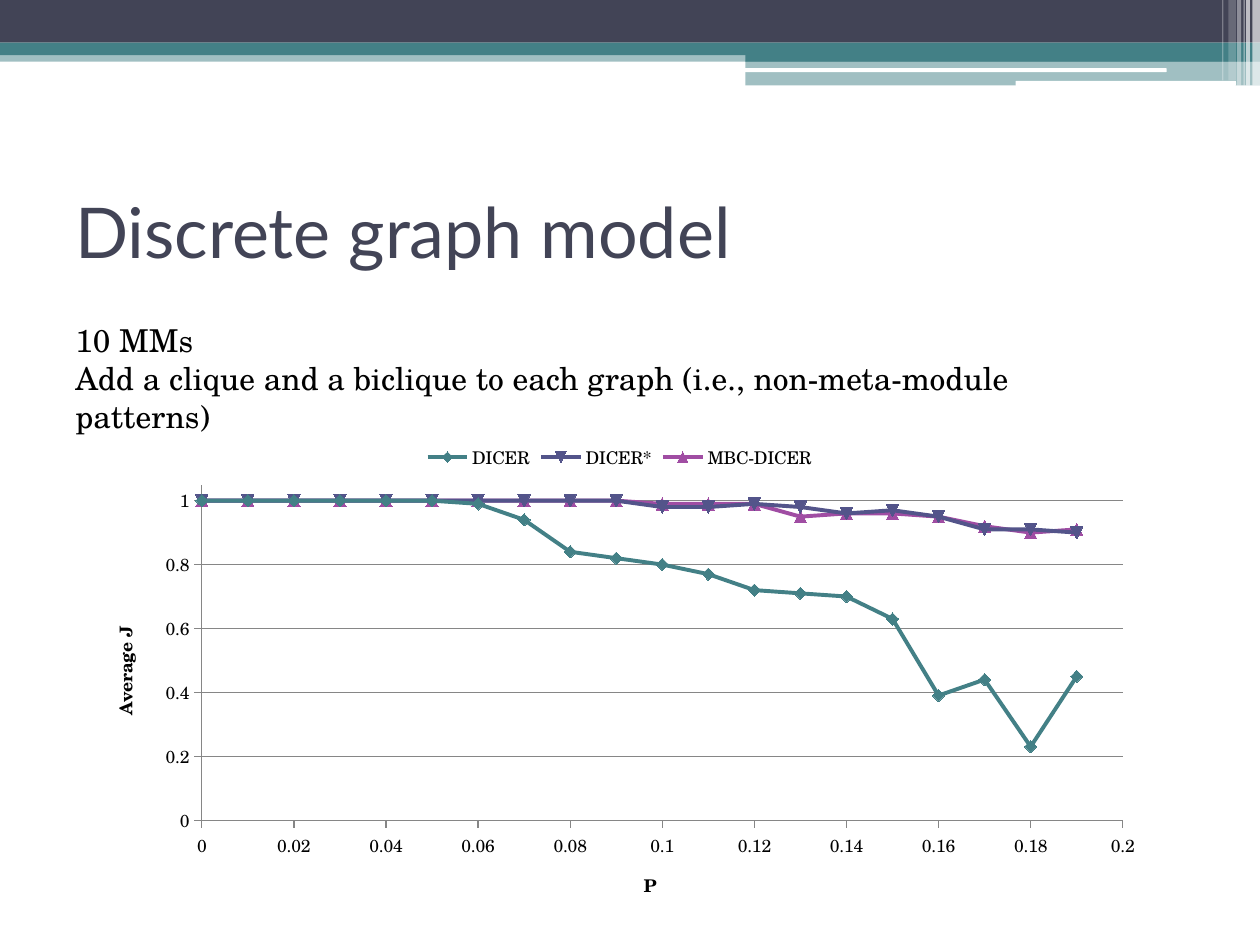
from typing import NamedTuple

from lxml.etree import SubElement
from pptx import Presentation
from pptx.chart.data import XyChartData
from pptx.dml.color import RGBColor
from pptx.enum.chart import XL_CHART_TYPE, XL_LEGEND_POSITION, XL_MARKER_STYLE, XL_TICK_MARK
from pptx.enum.shapes import MSO_SHAPE
from pptx.enum.text import MSO_ANCHOR
from pptx.oxml import parse_xml
from pptx.oxml.ns import nsdecls, qn
from pptx.util import Pt

NAVY = RGBColor(0x42, 0x44, 0x56)
TEAL = RGBColor(0x43, 0x80, 0x86)
BLUE = RGBColor(0x53, 0x54, 0x8A)
PLUM = RGBColor(0xA0, 0x4D, 0xA3)
GREY = RGBColor(0x86, 0x86, 0x86)
WHITE = RGBColor(0xFF, 0xFF, 0xFF)
BLACK = RGBColor(0, 0, 0)
SERIF = "TeX Gyre Schola"


class Bar(NamedTuple):
    left: float
    top: float
    width: float
    height: float
    color: RGBColor
    alpha: int = 100
    kind: MSO_SHAPE = MSO_SHAPE.RECTANGLE


class Line(NamedTuple):
    name: str
    color: RGBColor
    vals: list[float]


ROUND = MSO_SHAPE.ROUNDED_RECTANGLE
BARS = [
    Bar(0, 28.8, 720, 6.5, TEAL, 50),
    Bar(0, 0, 720, 24.4, NAVY),
    Bar(0, 24.4, 720, 7.2, TEAL),
    Bar(426, 28, 294, 7.2, TEAL),
    Bar(426, 34.6, 294, 14.2, TEAL, 50),
    Bar(425.5, 39, 241.2, 2.2, WHITE, kind=ROUND),
    Bar(580.3, 46.2, 126, 2.9, WHITE, kind=ROUND),
    Bar(715.7, 0, 4.3, 49, WHITE, 65),
    Bar(712.1, 0, 2.2, 49, WHITE, 65),
    Bar(710.6, 0, 0.7, 49, WHITE, 60),
    Bar(707, 0, 2.2, 49, WHITE, 40),
    Bar(702, 0, 4.3, 46, WHITE, 20),
    Bar(698.4, 0, 0.7, 46, WHITE, 30),
]
LINES = [
    Line("DICER", TEAL, [1] * 6 + [0.99, 0.94, 0.84, 0.82, 0.8, 0.77, 0.72, 0.71,
                                   0.7, 0.63, 0.39, 0.44, 0.23, 0.45]),
    Line("DICER*", BLUE, [1] * 10 + [0.98, 0.98, 0.99, 0.98, 0.96,
                                     0.97, 0.95, 0.91, 0.91, 0.9]),
    Line("MBC-DICER", PLUM, [1] * 10 + [0.99, 0.99, 0.99, 0.95, 0.96,
                                        0.96, 0.95, 0.92, 0.9, 0.91]),
]


def draw_bar(slide, bar: Bar) -> None:
    shape = slide.shapes.add_shape(bar.kind, Pt(bar.left), Pt(bar.top),
                                   Pt(bar.width), Pt(bar.height))
    shape.shadow.inherit = False
    shape.line.fill.background()
    shape.fill.solid()
    shape.fill.fore_color.rgb = bar.color
    if bar.alpha < 100:
        tint = shape.fill._xPr.find(".//" + qn("a:srgbClr"))
        SubElement(tint, qn("a:alpha")).set("val", str(bar.alpha * 1000))


def draw_text(slide, box: tuple, text: str, size: int, font: str,
              color: RGBColor, anchor: MSO_ANCHOR) -> None:
    frame = slide.shapes.add_textbox(*map(Pt, box)).text_frame
    frame.word_wrap = True
    frame.vertical_anchor = anchor
    frame.text = text
    for para in frame.paragraphs:
        for run in para.runs:
            run.font.size = Pt(size)
            run.font.name = font
            run.font.color.rgb = color


def style_axis(axis, title: str, top: float, step: float) -> None:
    axis.minimum_scale, axis.maximum_scale, axis.major_unit = 0, top, step
    axis.major_tick_mark = XL_TICK_MARK.OUTSIDE
    axis.minor_tick_mark = XL_TICK_MARK.NONE
    axis.tick_labels.number_format = "General"
    axis.tick_labels.number_format_is_linked = False
    axis.format.line.color.rgb = GREY
    axis.format.line.width = Pt(0.75)
    frame = axis.axis_title.text_frame
    frame.text = title
    font = frame.paragraphs[0].runs[0].font
    font.size, font.bold, font.name = Pt(10), True, SERIF
    font.color.rgb = BLACK


def place_plot(chart, left: float, top: float, width: float, height: float) -> None:
    """Fix the inner plot area, in fractions of the chart."""
    area = chart._chartSpace.chart.plotArea
    for old in area.findall(qn("c:layout")):
        area.remove(old)
    area.insert(0, parse_xml(
        f'<c:layout {nsdecls("c")}><c:manualLayout><c:layoutTarget val="inner"/>'
        '<c:xMode val="edge"/><c:yMode val="edge"/>'
        f'<c:x val="{left}"/><c:y val="{top}"/><c:w val="{width}"/><c:h val="{height}"/>'
        '</c:manualLayout></c:layout>'))


def draw_chart(slide) -> None:
    data = XyChartData()
    for line in LINES:
        series = data.add_series(line.name)
        for step, val in enumerate(line.vals):
            series.add_data_point(step / 100, val)
    chart = slide.shapes.add_chart(XL_CHART_TYPE.XY_SCATTER_SMOOTH, Pt(48), Pt(246),
                                   Pt(612), Pt(282), data).chart
    chart.has_title = False
    chart.font.size, chart.font.name = Pt(10), SERIF
    chart.font.color.rgb = BLACK
    chart.has_legend = True
    chart.legend.position = XL_LEGEND_POSITION.TOP
    chart.legend.include_in_layout = False
    style_axis(chart.category_axis, "P", 0.2, 0.02)
    style_axis(chart.value_axis, "Average J", 1.05, 0.2)
    chart.category_axis.has_major_gridlines = False
    chart.value_axis.has_major_gridlines = True
    grid = chart.value_axis.major_gridlines.format.line
    grid.color.rgb, grid.width = GREY, Pt(0.75)
    place_plot(chart, 0.11, 0.11, 0.86, 0.68)
    chart.plots[0].vary_by_categories = False
    for index, (series, line) in enumerate(zip(chart.plots[0].series, LINES), 1):
        # Automatic markers follow the index: diamond, then triangles down and up
        series._element.find(qn("c:idx")).set("val", str(index))
        series.smooth = True if hasattr(series, "smooth") else None
        series.format.line.color.rgb = line.color
        series.format.line.width = Pt(2.25)
        mark = series.marker
        mark.style, mark.size = XL_MARKER_STYLE.AUTOMATIC, 7
        mark.format.fill.solid()
        mark.format.fill.fore_color.rgb = line.color
        mark.format.line.color.rgb = line.color


def main() -> None:
    deck = Presentation()
    deck.slide_width, deck.slide_height = Pt(720), Pt(540)
    slide = deck.slides.add_slide(deck.slide_layouts[6])
    for bar in BARS:
        draw_bar(slide, bar)
    draw_text(slide, (36, 90, 648, 84), "Discrete graph model", 40, "Lato",
              NAVY, MSO_ANCHOR.MIDDLE)
    draw_text(slide, (36, 180, 618, 51),
              "10 MMs\nAdd a clique and a biclique to each graph "
              "(i.e., non-meta-module patterns)", 18, SERIF, BLACK, MSO_ANCHOR.TOP)
    draw_chart(slide)
    deck.save("out.pptx")


if __name__ == "__main__":
    main()
